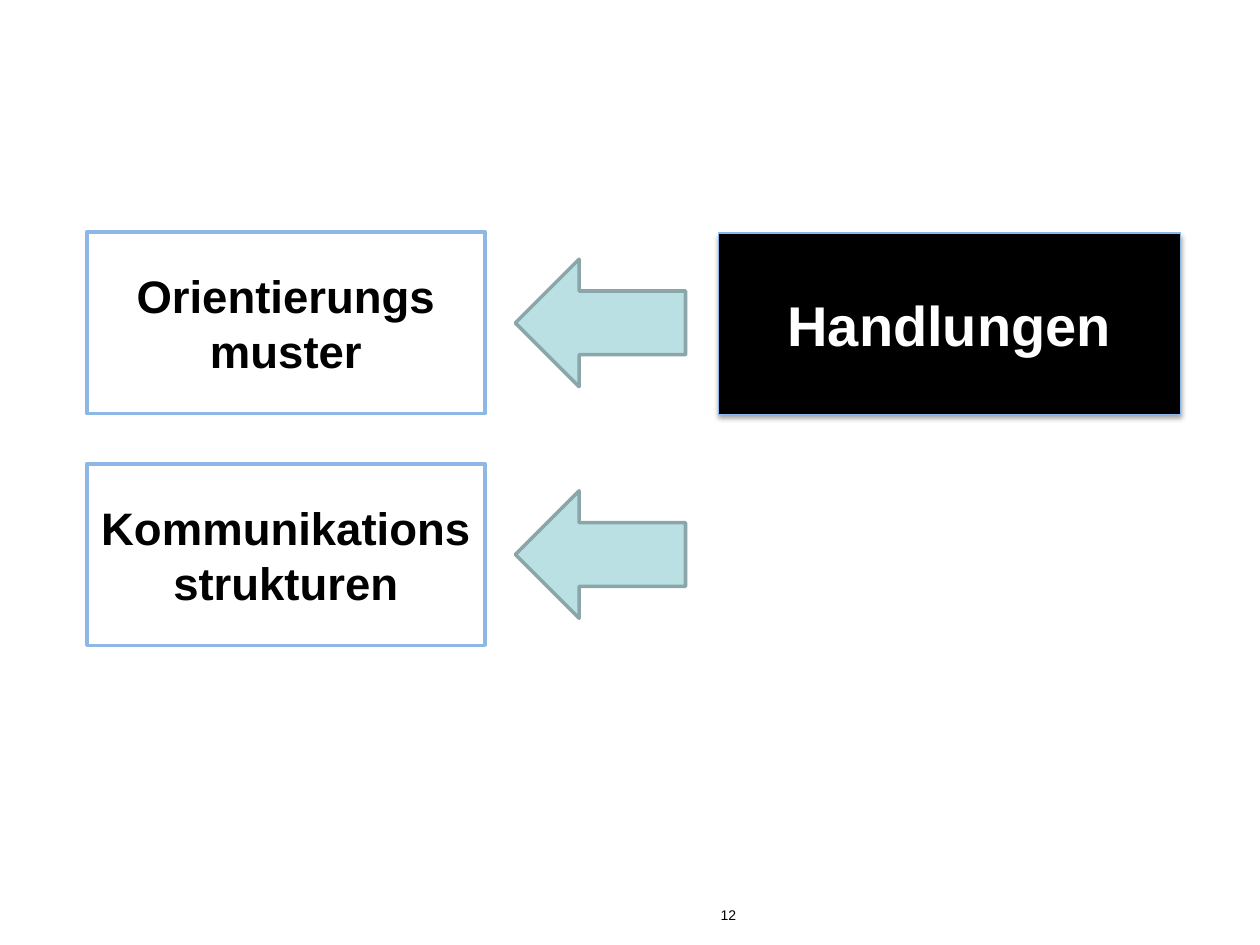
from lxml import etree
from pptx import Presentation
from pptx.dml.color import RGBColor
from pptx.enum import shapes, text
from pptx.oxml import ns
from pptx.util import Cm, Pt

COLORS = {
    "black": "000000",
    "white": "FFFFFF",
    "frame": "8DB8E6",
    "arrow": "BBE0E3",
    "arrow_edge": "8AA6A8",
}
ROW_TOP, ROW_PITCH, ROW_HEIGHT = 4.68, 4.67, 3.66
ARROW_HEIGHT = 2.57
CAUSES = [["Orientierungs", "muster"], ["Kommunikationsstrukturen"]]


def color(name):
    return RGBColor.from_string(COLORS[name])


def write(frame, lines, size, ink, align, bold=False):
    frame.word_wrap = True
    for index, line in enumerate(lines):
        para = frame.paragraphs[0] if index == 0 else frame.add_paragraph()
        para.text = line
        para.alignment = align
        para.font.name = "Arial"
        para.font.size = Pt(size)
        para.font.bold = bold
        para.font.color.rgb = color(ink)


def add_figure(page, kind, place, fill, edge, edge_width):
    figure = page.shapes.add_shape(kind, *map(Cm, place))
    figure.shadow.inherit = False
    figure.fill.solid()
    figure.fill.fore_color.rgb = color(fill)
    figure.line.color.rgb = color(edge)
    figure.line.width = Pt(edge_width)
    return figure


def add_box(page, place, lines, size, ink, fill, edge_width):
    box = add_figure(page, shapes.MSO_SHAPE.RECTANGLE, place, fill, "frame", edge_width)
    box.text_frame.vertical_anchor = text.MSO_ANCHOR.MIDDLE
    write(box.text_frame, lines, size, ink, text.PP_ALIGN.CENTER, bold=True)
    return box


def add_shadow(figure):
    """Put a soft shadow straight below the figure."""
    effects = figure._element.spPr.find(ns.qn("a:effectLst"))
    shadow = etree.SubElement(
        effects, ns.qn("a:outerShdw"), blurRad=str(Pt(3.1)), dist=str(Pt(1.8)),
        dir="5400000", rotWithShape="0")
    tint = etree.SubElement(shadow, ns.qn("a:srgbClr"), val=COLORS["black"])
    etree.SubElement(tint, ns.qn("a:alpha"), val="35000")


def add_page_number(page, number):
    box = page.shapes.add_textbox(Cm(12.37), Cm(18.16), Cm(2.72), Cm(0.89))
    write(box.text_frame, [number], 8, "black", text.PP_ALIGN.RIGHT)


def main():
    deck = Presentation()
    deck.slide_width, deck.slide_height = Cm(25.4), Cm(19.05)
    page = deck.slides.add_slide(deck.slide_layouts[6])

    add_page_number(page, "12")
    actions = add_box(page, (14.48, 4.7, 9.32, ROW_HEIGHT), ["Handlungen"],
                      32, "white", "black", 0.75)
    add_shadow(actions)

    for row, lines in enumerate(CAUSES):
        top = ROW_TOP + row * ROW_PITCH
        add_box(page, (1.75, top, 8.03, ROW_HEIGHT), lines, 26, "black", "white", 2)
        arrow_top = top + (ROW_HEIGHT - ARROW_HEIGHT) / 2
        add_figure(page, shapes.MSO_SHAPE.LEFT_ARROW,
                   (10.39, arrow_top, 3.43, ARROW_HEIGHT), "arrow", "arrow_edge", 2)

    deck.save("out.pptx")


if __name__ == "__main__":
    main()
